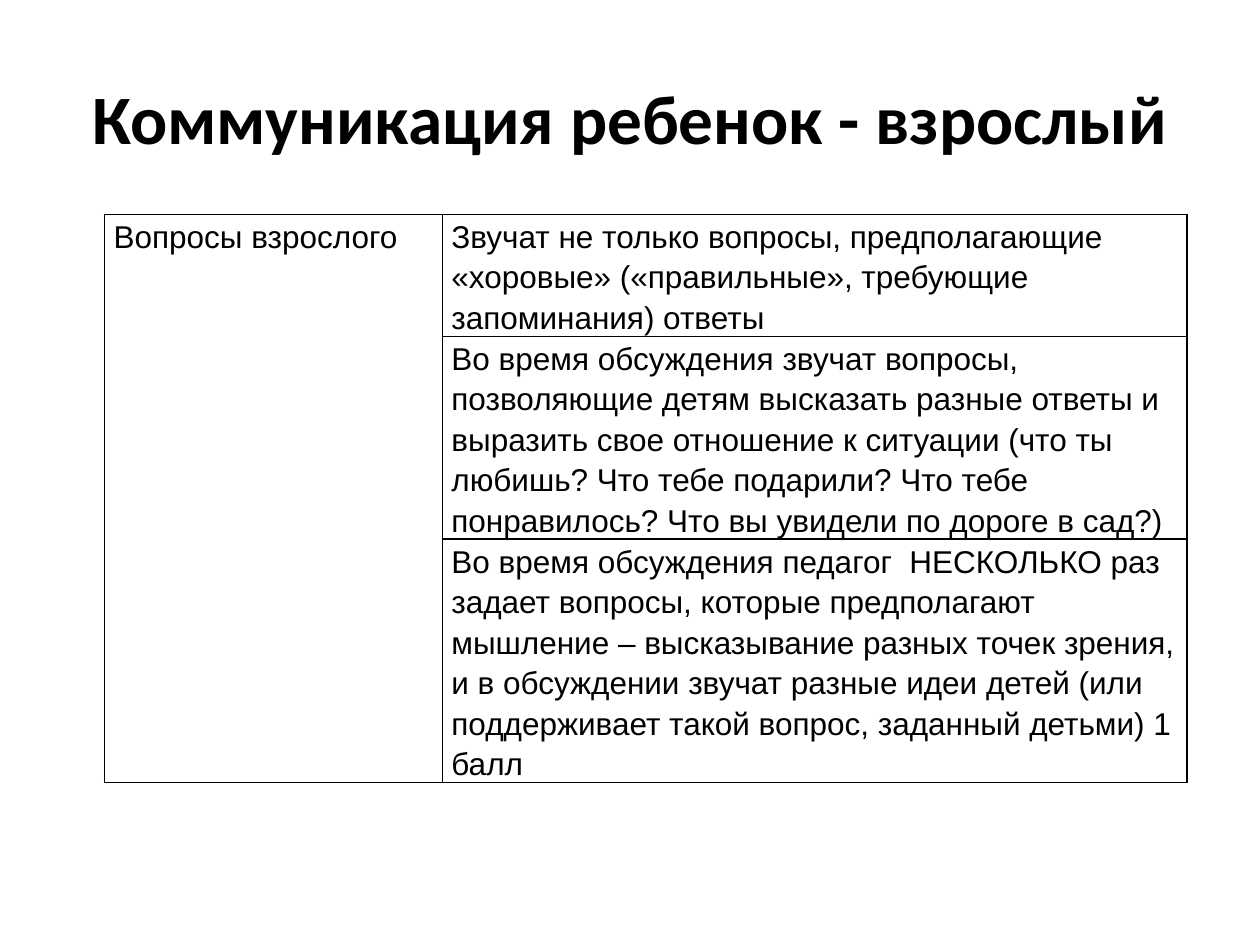
from lxml import etree
from pptx import Presentation
from pptx.dml.color import RGBColor
from pptx.enum.text import MSO_ANCHOR, PP_ALIGN
from pptx.oxml.ns import qn
from pptx.util import Cm, Pt

BLACK = RGBColor(0, 0, 0)
CENTER = PP_ALIGN.CENTER
MIDDLE = MSO_ANCHOR.MIDDLE
TOP = MSO_ANCHOR.TOP

TOPIC = "Вопросы взрослого"
ITEMS = [
    "Звучат не только вопросы, предполагающие «хоровые» («правильные», "
    "требующие запоминания) ответы",
    "Во время обсуждения звучат вопросы, позволяющие детям высказать разные "
    "ответы и выразить свое отношение к ситуации (что ты любишь? Что тебе "
    "подарили? Что тебе понравилось? Что вы увидели по дороге в сад?)",
    "Во время обсуждения педагог  НЕСКОЛЬКО раз задает вопросы, которые "
    "предполагают мышление – высказывание разных точек зрения, и в обсуждении "
    "звучат разные идеи детей (или поддерживает такой вопрос, заданный детьми) "
    "1 балл",
]
WIDTHS = [Cm(6.81), Cm(15.01)]
HEIGHTS = [Cm(2.46), Cm(4.09), Cm(4.9)]


def style(par, name, size, bold=False):
    for run in par.runs:
        run.font.name = name
        run.font.size = Pt(size)
        run.font.bold = bold
        run.font.color.rgb = BLACK


def border(cell):
    props = cell._tc.get_or_add_tcPr()
    for pos, side in enumerate(("a:lnL", "a:lnR", "a:lnT", "a:lnB")):
        line = etree.Element(qn(side), w=str(Pt(1)))
        fill = etree.SubElement(line, qn("a:solidFill"))
        etree.SubElement(fill, qn("a:srgbClr"), val=str(BLACK))
        props.insert(pos, line)


prs = Presentation()
prs.slide_width, prs.slide_height = Cm(25.4), Cm(19.05)
slide = prs.slides.add_slide(prs.slide_layouts[5])

# Title
title = slide.shapes.title
title.left, title.top = Cm(1.27), Cm(0.76)
title.width, title.height = Cm(22.86), Cm(3.18)
title.text_frame.text = "Коммуникация ребенок - взрослый"
title.text_frame.vertical_anchor = MIDDLE
head = title.text_frame.paragraphs[0]
head.alignment = CENTER
style(head, "Calibri", 39.6, True)

# Table with the topic merged down the left column
table = slide.shapes.add_table(
    len(ITEMS), 2, Cm(2.11), Cm(4.32), sum(WIDTHS), sum(HEIGHTS)).table
table.first_row = False
table.horz_banding = False
for col, width in zip(table.columns, WIDTHS):
    col.width = width
for row, height in zip(table.rows, HEIGHTS):
    row.height = height
table.cell(0, 0).merge(table.cell(len(ITEMS) - 1, 0))

# Words
table.cell(0, 0).text_frame.text = TOPIC
for idx, item in enumerate(ITEMS):
    table.cell(idx, 1).text_frame.text = item

# Cell format
for cell in table.iter_cells():
    cell.margin_left = cell.margin_right = Cm(0.18)
    cell.margin_top = cell.margin_bottom = 0
    cell.vertical_anchor = TOP
    cell.fill.background()
    border(cell)
    par = cell.text_frame.paragraphs[0]
    par.line_spacing = 1.15
    style(par, "Arial", 18)

prs.save("out.pptx")
